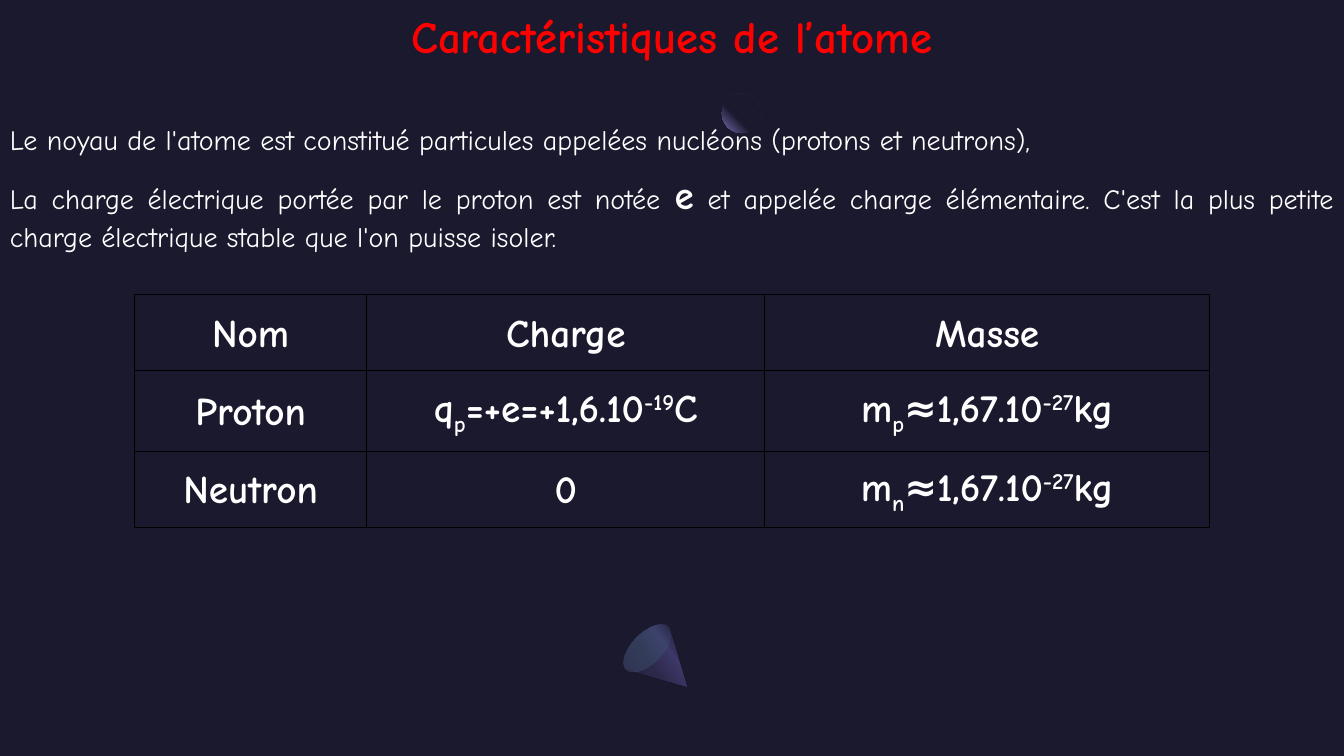
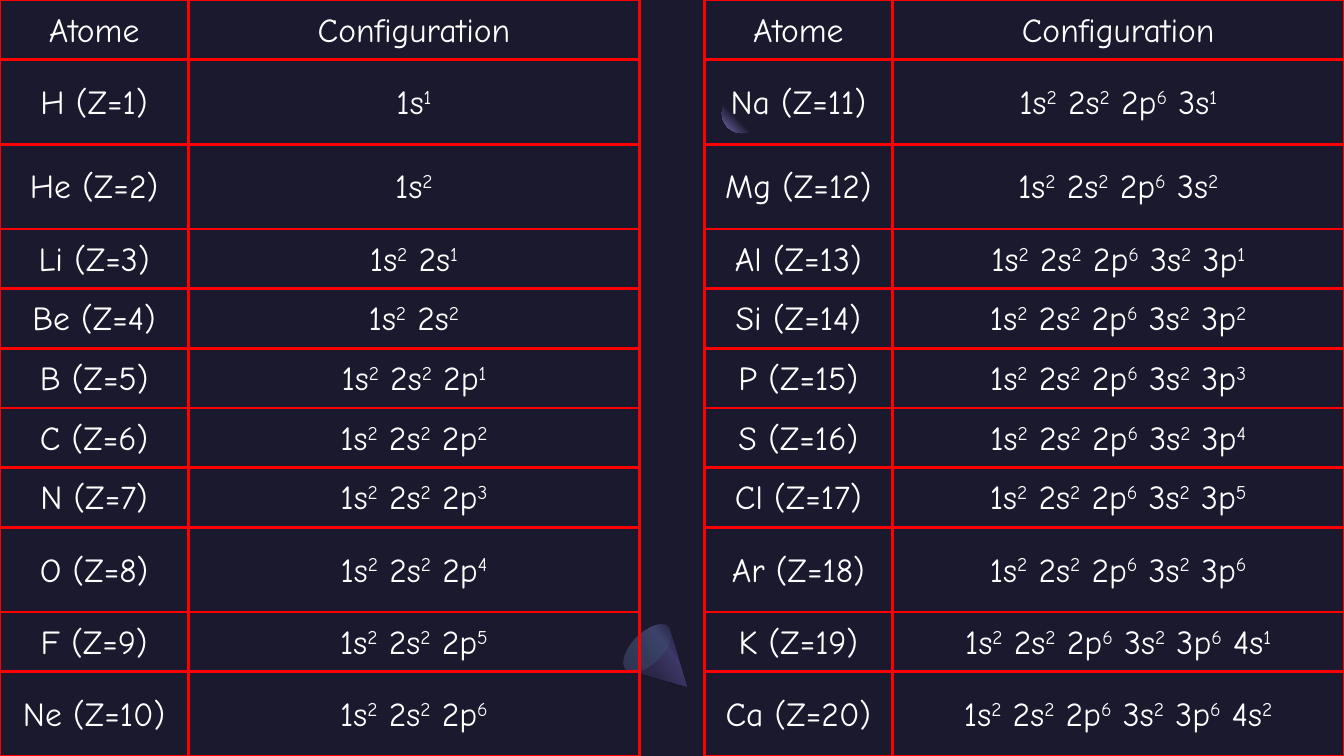
from dataclasses import dataclass
from math import cos, pi, sin

from lxml import etree
from pptx import Presentation
from pptx.dml.color import RGBColor
from pptx.enum.shapes import MSO_SHAPE
from pptx.enum.text import MSO_ANCHOR, PP_ALIGN
from pptx.oxml.ns import qn
from pptx.shapes.base import BaseShape
from pptx.slide import Slide
from pptx.table import _Cell
from pptx.text.text import _Paragraph
from pptx.util import Inches, Pt

OVAL = MSO_SHAPE.OVAL
MIDDLE = MSO_ANCHOR.MIDDLE
CENTER, JUSTIFY = PP_ALIGN.CENTER, PP_ALIGN.JUSTIFY

WIDTH, HEIGHT = 13.33, 7.5
FONT = "Comic Neue"
PLAIN_TABLE_STYLE = "{2D5ABB26-0587-4C30-8999-92F81FD0307C}"
BASELINES = {"_": "-25000", "^": "30000"}
COLORS = {
    "background": "1B192E", "title": "FF0000", "text": "FFFFFF",
    "grid": "000000", "red grid": "FF0000", "moon": "7771B2",
    "cone dark": "2C284A", "cone light": "3C3867",
    "rim": "454075", "rim glow": "5BEFC1",
}
SUBSHELLS = (("1s", 2), ("2s", 2), ("2p", 6), ("3s", 2), ("3p", 6), ("4s", 2))
ATOMS = "H He Li Be B C N O F Ne Na Mg Al Si P S Cl Ar K Ca".split()


@dataclass(frozen=True)
class TextStyle:
    size: float
    color: str = "text"
    bold: bool = False
    alignment: PP_ALIGN = CENTER


@dataclass(frozen=True)
class Stop:
    position: int
    color: str
    alpha: int = 100


@dataclass(frozen=True)
class Grid:
    """Places and sizes are shares of the slide."""
    left: float
    top: float
    columns: tuple[float, ...]
    rows: tuple[float, ...]
    border: str
    border_width: float
    side_margin: float
    style: TextStyle


TITLE = TextStyle(32, "title", True)
BODY = TextStyle(20, alignment=JUSTIFY)
PARTICLE_GRID = Grid(0.1, 0.39, (0.173, 0.296, 0.331), (0.1, 0.107, 0.101),
                     "grid", 1, 0.05, TextStyle(28, bold=True))
LOW, HIGH = 0.079, 0.112
ATOM_GRID = Grid(0, 0, (0.14, 0.336, 0.048, 0.14, 0.336),
                 (LOW, HIGH, HIGH, *[LOW] * 5, HIGH, LOW, HIGH),
                 "red grid", 2.25, 0.07, TextStyle(24))


def across(share: float) -> int:
    return Inches(WIDTH * share)


def down(share: float) -> int:
    return Inches(HEIGHT * share)


def write(paragraph: _Paragraph, text: str, style: TextStyle) -> None:
    """Write runs parted by "|"; a leading "_" lowers, "^" raises, "*" enlarges."""
    paragraph.alignment = style.alignment
    paragraph.line_spacing = 1.07
    paragraph.space_after = Pt(8)
    font = paragraph.font
    font.name, font.size, font.bold = FONT, Pt(style.size), style.bold
    font.color.rgb = RGBColor.from_string(COLORS[style.color])
    for part in text.split("|"):
        run = paragraph.add_run()
        run.text = part.lstrip("_^*")
        if part[0] in BASELINES:
            run._r.get_or_add_rPr().set("baseline", BASELINES[part[0]])
        elif part[0] == "*":
            run.font.size, run.font.bold = Pt(28), True


def add_text(slide: Slide, top: float, height: float, texts: list[str],
             style: TextStyle) -> None:
    frame = slide.shapes.add_textbox(0, down(top), across(1), down(height)).text_frame
    frame.word_wrap = True
    for index, text in enumerate(texts):
        paragraph = frame.add_paragraph() if index else frame.paragraphs[0]
        write(paragraph, text, style)


def set_borders(cell: _Cell, sides: str, color: str, width: float) -> None:
    properties = cell._tc.get_or_add_tcPr()
    for index, side in enumerate(sides):
        line = etree.Element(qn(f"a:ln{side}"), w=str(Pt(width)))
        fill = etree.SubElement(line, qn("a:solidFill"))
        etree.SubElement(fill, qn("a:srgbClr"), val=COLORS[color])
        properties.insert(index, line)


def add_grid(slide: Slide, grid: Grid, texts: list[list[str]]) -> None:
    """Draw a table; a cell without text has side borders only."""
    table = slide.shapes.add_table(
        len(grid.rows), len(grid.columns), across(grid.left), down(grid.top),
        across(sum(grid.columns)), down(sum(grid.rows))).table
    table.first_row = table.horz_banding = False
    table._tbl.tblPr.find(qn("a:tableStyleId")).text = PLAIN_TABLE_STYLE
    for column, share in zip(table.columns, grid.columns):
        column.width = across(share)
    for row, share, row_texts in zip(table.rows, grid.rows, texts):
        row.height = down(share)
        for cell, text in zip(row.cells, row_texts):
            cell.fill.background()
            cell.vertical_anchor = MIDDLE
            cell.margin_left = cell.margin_right = Inches(grid.side_margin)
            cell.margin_top = cell.margin_bottom = 0
            if text:
                write(cell.text_frame.paragraphs[0], text, grid.style)
            set_borders(cell, "LRTB" if text else "LR", grid.border, grid.border_width)


def fill_gradient(shape: BaseShape, stops: list[Stop], angle: int | None = None) -> None:
    """Fill along an angle, or in circles from the top right corner without one."""
    shape.shadow.inherit = False
    shape.line.fill.background()
    shape.fill.background()
    gradient = etree.Element(qn("a:gradFill"), rotWithShape="1")
    stop_list = etree.SubElement(gradient, qn("a:gsLst"))
    for stop in stops:
        mark = etree.SubElement(stop_list, qn("a:gs"), pos=str(stop.position * 1000))
        color = etree.SubElement(mark, qn("a:srgbClr"), val=COLORS[stop.color])
        if stop.alpha < 100:
            etree.SubElement(color, qn("a:alpha"), val=str(stop.alpha * 1000))
    if angle is None:
        circles = etree.SubElement(gradient, qn("a:path"), path="circle")
        etree.SubElement(circles, qn("a:fillToRect"), l="100000", b="100000")
    else:
        etree.SubElement(gradient, qn("a:lin"), ang=str(angle * 60000), scaled="0")
    properties = shape._element.spPr
    properties.replace(properties.find(qn("a:noFill")), gradient)


def add_moon(slide: Slide) -> None:
    moon = slide.shapes.add_shape(OVAL, Inches(7.16), Inches(0.93),
                                  Inches(0.39), Inches(0.39))
    fill_gradient(moon, [Stop(60, "background"), Stop(100, "moon")])


def add_cone(slide: Slide) -> None:
    """Draw an upright cone with a rounded base, turned, and its open rim."""
    left, top, width, height, rim_height = 6.27, 6.22, 0.59, 0.69, 0.3
    radius, depth = width / 2, rim_height / 2
    steps = 24
    base = [(Inches(left + radius + radius * cos(pi * step / steps)),
             Inches(top + height - depth + depth * sin(pi * step / steps)))
            for step in range(steps + 1)]
    builder = slide.shapes.build_freeform(Inches(left + radius), Inches(top))
    builder.add_line_segments(base, close=True)
    cone = builder.convert_to_shape()
    cone.rotation = 135
    fill_gradient(cone, [Stop(30, "cone dark"), Stop(40, "cone light"),
                         Stop(60, "cone dark"), Stop(100, "background")], 10)
    rim = slide.shapes.add_shape(OVAL, Inches(left), Inches(6.13),
                                 Inches(rim_height), Inches(width))
    rim.rotation = 225
    fill_gradient(rim, [Stop(0, "rim", 33), Stop(100, "rim glow", 0)], 90)


def add_slide(presentation: Presentation) -> Slide:
    slide = presentation.slides.add_slide(presentation.slide_layouts[6])
    fill = slide.background.fill
    fill.solid()
    fill.fore_color.rgb = RGBColor.from_string(COLORS["background"])
    add_moon(slide)
    add_cone(slide)
    return slide


def configuration(electrons: int) -> str:
    """Fill the subshells in order, as in 1s² 2s¹."""
    filled = []
    for name, capacity in SUBSHELLS:
        if electrons > 0:
            filled.append(f"{name}|^{min(electrons, capacity)}")
        electrons -= capacity
    return "| ".join(filled)


def atom_cells(number: int) -> list[str]:
    return [f"{ATOMS[number - 1]} (Z={number})", configuration(number)]


def add_characteristics(presentation: Presentation) -> None:
    slide = add_slide(presentation)
    add_text(slide, 0, 0.09, ["Caractéristiques de l’atome"], TITLE)
    add_text(slide, 0.152, 0.19, [
        "Le noyau de l'atome est constitué particules appelées nucléons "
        "(protons et neutrons),",
        "La charge électrique portée par le proton est notée |*e| et appelée charge "
        "élémentaire. C'est la plus petite charge électrique stable que l'on "
        "puisse isoler.",
    ], BODY)
    add_grid(slide, PARTICLE_GRID, [
        ["Nom", "Charge", "Masse"],
        ["Proton", "q|_p|=+e=+1,6.10|^-19|C", "m|_p|≈1,67.10|^-27|kg"],
        ["Neutron", "0", "m|_n|≈1,67.10|^-27|kg"],
    ])


def add_configurations(presentation: Presentation) -> None:
    heading = ["Atome", "Configuration"]
    half = len(ATOMS) // 2
    rows = [atom_cells(number) + [""] + atom_cells(number + half)
            for number in range(1, half + 1)]
    add_grid(add_slide(presentation), ATOM_GRID, [heading + [""] + heading] + rows)


def main() -> None:
    presentation = Presentation()
    presentation.slide_width, presentation.slide_height = across(1), down(1)
    add_characteristics(presentation)
    add_configurations(presentation)
    presentation.save("out.pptx")


if __name__ == "__main__":
    main()
